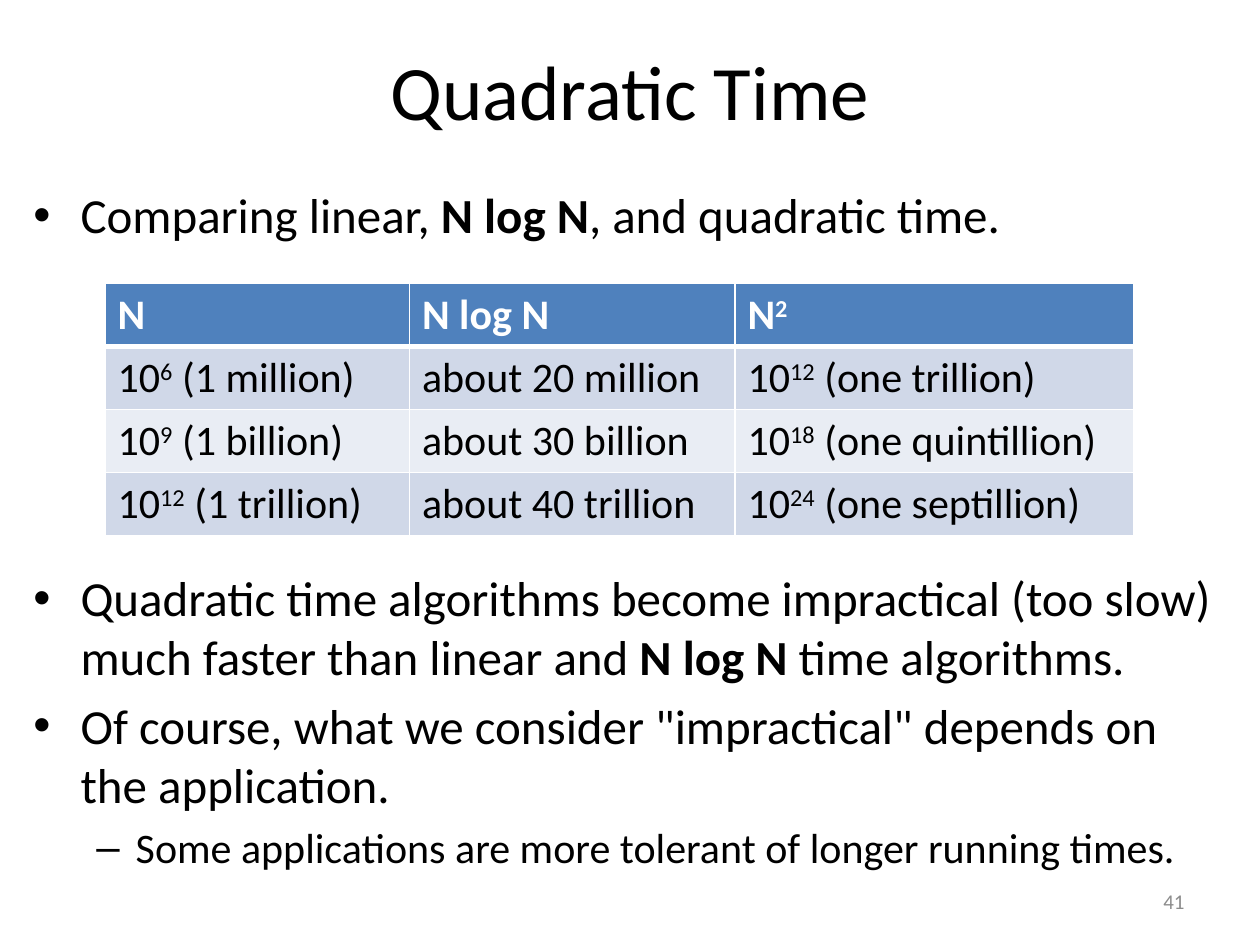
from lxml import etree
from pptx import Presentation
from pptx import util as u
from pptx.dml.color import RGBColor
from pptx.enum import text
from pptx.oxml import ns


def rgb(value):
    return RGBColor.from_string(value)


class Deck:
    """Holds the style and the current slide, and draws each kind of element."""

    font = "Calibri"
    ink, paper, grey = "000000", "FFFFFF", "8C8C8C"
    header, bands = "4F81BD", ("D0D8E8", "E9EDF4")
    bullets = (("•", 27, 27), ("–", 58.5, 22.5))

    def __init__(self, width, height):
        self.prs = Presentation()
        self.prs.slide_width, self.prs.slide_height = u.Pt(width), u.Pt(height)
        self.s = self.prs.slides.add_slide(self.prs.slide_layouts[6])

    def runs(self, p, words, size, color, bold=False, raised=False):
        for i, part in enumerate(words.split("|")):
            r = p.add_run()
            r.text = part
            r.font.name, r.font.size = self.font, u.Pt(size)
            r.font.color.rgb = rgb(color)
            marked = i % 2 == 1
            r.font.bold = bold or (marked and not raised)
            if marked and raised:
                r.font._element.set("baseline", "30000")

    def frame(self, box, anchor):
        tf = self.s.shapes.add_textbox(*map(u.Pt, box)).text_frame
        tf.word_wrap = True
        tf.vertical_anchor = anchor
        return tf

    def label(self, box, words, size, color, align):
        p = self.frame(box, text.MSO_ANCHOR.MIDDLE).paragraphs[0]
        p.alignment = align
        self.runs(p, words, size, color)

    def bullet_list(self, box, items):
        tf = self.frame(box, text.MSO_ANCHOR.TOP)
        for i, (level, size, words) in enumerate(items):
            p = tf.add_paragraph() if i else tf.paragraphs[0]
            p.level = level
            p.space_before = u.Pt(size * 0.2)
            mark, margin, hang = self.bullets[level]
            pPr = p._p.get_or_add_pPr()
            pPr.set("marL", str(u.Pt(margin)))
            pPr.set("indent", str(-u.Pt(hang)))
            etree.SubElement(pPr, ns.qn("a:buFont")).set("typeface", "Arial")
            etree.SubElement(pPr, ns.qn("a:buChar")).set("char", mark)
            self.runs(p, words, size, self.ink)

    def border(self, cell, side, width):
        ln = etree.SubElement(cell._tc.get_or_add_tcPr(), ns.qn(f"a:ln{side}"))
        ln.set("w", str(u.Pt(width)))
        fill = etree.SubElement(ln, ns.qn("a:solidFill"))
        etree.SubElement(fill, ns.qn("a:srgbClr")).set("val", self.paper)

    def table(self, left, top, widths, height, size, rows):
        table = self.s.shapes.add_table(
            len(rows), len(widths), u.Pt(left), u.Pt(top),
            u.Pt(sum(widths)), u.Pt(height * len(rows))).table
        for column, width in zip(table.columns, widths):
            column.width = u.Pt(width)
        for i, row in enumerate(rows):
            table.rows[i].height = u.Pt(height)
            head = i == 0
            for j, words in enumerate(row):
                cell = table.cell(i, j)
                for side in "LRTB":
                    thick = (side, i) in (("B", 0), ("T", 1))
                    self.border(cell, side, 3 if thick else 1)
                cell.fill.solid()
                cell.fill.fore_color.rgb = rgb(
                    self.header if head else self.bands[(i - 1) % 2])
                self.runs(cell.text_frame.paragraphs[0], words, size,
                          self.paper if head else self.ink, head, raised=True)


def main():
    deck = Deck(720, 540)
    deck.label((36, 6, 648, 90), "Quadratic Time", 44, deck.ink, text.PP_ALIGN.CENTER)
    deck.bullet_list((12, 102, 690, 48), [
        (0, 28, "Comparing linear, |N log N|, and quadratic time."),
    ])
    deck.bullet_list((12, 321, 690, 177), [
        (0, 28, "Quadratic time algorithms become impractical (too slow) much faster "
                "than linear and |N log N| time algorithms."),
        (0, 28, 'Of course, what we consider "impractical" depends on the application.'),
        (1, 24, "Some applications are more tolerant of longer running times."),
    ])
    deck.label((516, 500.5, 168, 28.8), "41", 12, deck.grey, text.PP_ALIGN.RIGHT)
    deck.table(60, 162, (174, 186, 228), 36, 24, [
        ("N", "N log N", "N|2"),
        ("10|6| (1 million)", "about 20 million", "10|12| (one trillion)"),
        ("10|9| (1 billion)", "about 30 billion", "10|18| (one quintillion)"),
        ("10|12| (1 trillion)", "about 40 trillion", "10|24| (one septillion)"),
    ])
    deck.prs.save("out.pptx")


if __name__ == "__main__":
    main()
